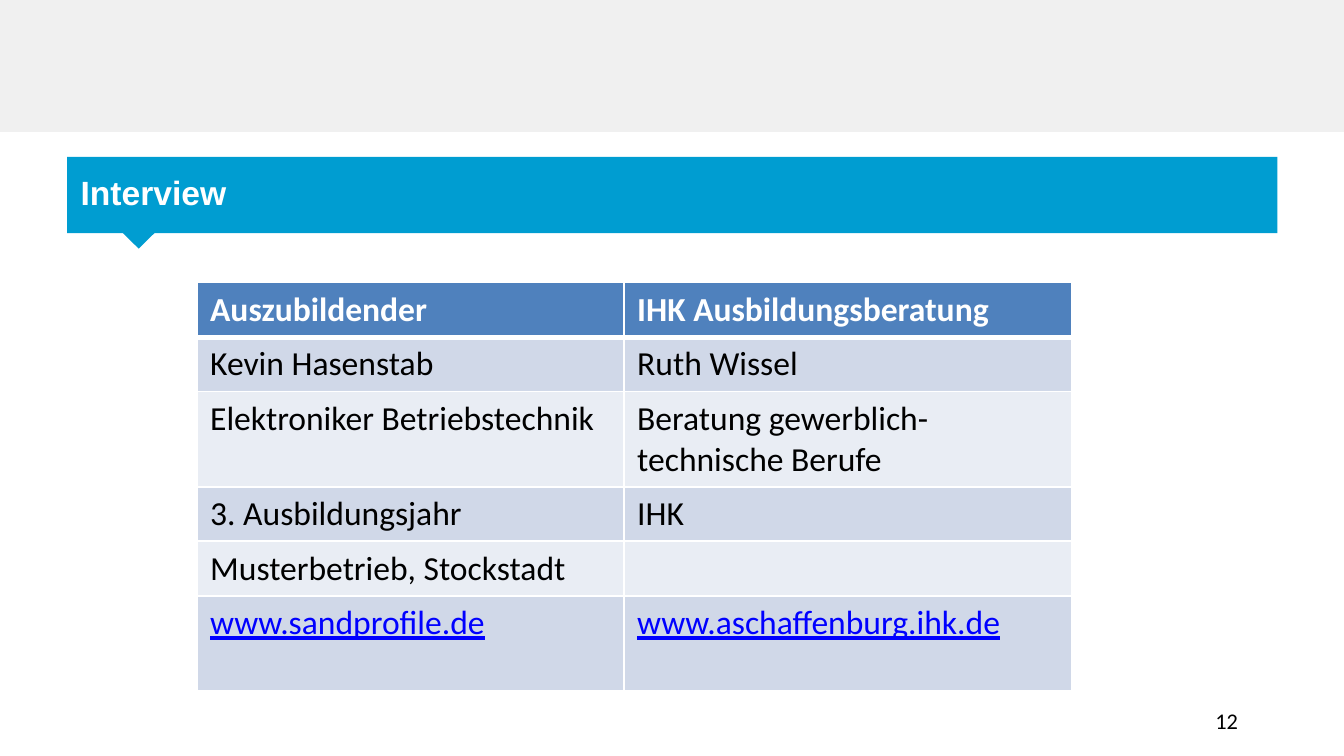
"""Build the interview slide with its table of two interview partners."""
import pptx
import pptx.dml.color
import pptx.enum.shapes
import pptx.enum.text
import pptx.oxml
import pptx.oxml.ns
import pptx.util

Pt = pptx.util.Pt
RGBColor = pptx.dml.color.RGBColor
MSO_SHAPE = pptx.enum.shapes.MSO_SHAPE
MSO_ANCHOR = pptx.enum.text.MSO_ANCHOR
PP_ALIGN = pptx.enum.text.PP_ALIGN

COLORS = {
    "white": "FFFFFF",
    "black": "000000",
    "band": "F0F0F0",
    "accent": "009DD1",
    "header": "4F81BD",
    "odd_row": "D0D8E8",
    "even_row": "E9EDF4",
    "link": "0000FF",
}
ROWS = [
    ("Auszubildender", "IHK Ausbildungsberatung"),
    ("Kevin Hasenstab", "Ruth Wissel"),
    ("Elektroniker Betriebstechnik", "Beratung gewerblich-technische Berufe"),
    ("3. Ausbildungsjahr", "IHK"),
    ("Musterbetrieb, Stockstadt", ""),
    ("www.sandprofile.de", "www.aschaffenburg.ihk.de"),
]
ROW_HEIGHTS = [29.2, 29.2, 51, 29.2, 29.2, 51]
COLUMN_WIDTHS = [228.8, 239.8]


def format_font(font, name, size, color, bold=False):
    font.name = name
    font.size = Pt(size)
    font.bold = bold
    font.color.rgb = RGBColor.from_string(COLORS[color])


def add_border(cell, side, width):
    cell._tc.get_or_add_tcPr().append(pptx.oxml.parse_xml(
        f'<a:{side} {pptx.oxml.ns.nsdecls("a")} w="{Pt(width)}"><a:solidFill>'
        f'<a:srgbClr val="{COLORS["white"]}"/></a:solidFill></a:{side}>'
    ))


presentation = pptx.Presentation()
presentation.slide_width = Pt(720)
presentation.slide_height = Pt(405)
slide = presentation.slides.add_slide(presentation.slide_layouts[5])

decorations = [
    (MSO_SHAPE.RECTANGLE, (0, 0, 720, 70.6), 0, "band"),
    (MSO_SHAPE.ISOSCELES_TRIANGLE, (65.6, 124.6, 17.4, 8.6), 180, "accent"),
]
for kind, box, rotation, color in decorations:
    shape = slide.shapes.add_shape(kind, *map(Pt, box))
    shape.rotation = rotation
    shape.shadow.inherit = False
    shape.fill.solid()
    shape.fill.fore_color.rgb = RGBColor.from_string(COLORS[color])
    shape.line.fill.background()

title = slide.shapes.title
title.left, title.top, title.width, title.height = map(Pt, (36, 84, 648.4, 41))
title.fill.solid()
title.fill.fore_color.rgb = RGBColor.from_string(COLORS["accent"])
title.text_frame.text = "Interview"
title.text_frame.auto_size = pptx.enum.text.MSO_AUTO_SIZE.NONE
title.text_frame.vertical_anchor = MSO_ANCHOR.TOP
paragraph = title.text_frame.paragraphs[0]
paragraph.alignment = PP_ALIGN.LEFT
paragraph.line_spacing = 1.2
format_font(paragraph.runs[0].font, "Arial", 18, "white", bold=True)

page_number = slide.shapes.add_textbox(*map(Pt, (508.3, 375.4, 162, 21.6)))
page_number.text_frame.word_wrap = True
page_number.text_frame.vertical_anchor = MSO_ANCHOR.MIDDLE
page_number.text_frame.text = "12"
paragraph = page_number.text_frame.paragraphs[0]
paragraph.alignment = PP_ALIGN.RIGHT
format_font(paragraph.runs[0].font, "Calibri", 12, "black")

table = slide.shapes.add_table(
    len(ROWS), len(COLUMN_WIDTHS), Pt(105.4), Pt(151.4),
    Pt(sum(COLUMN_WIDTHS)), Pt(sum(ROW_HEIGHTS)),
).table
for column, width in zip(table.columns, COLUMN_WIDTHS):
    column.width = Pt(width)

for row_index, texts in enumerate(ROWS):
    table.rows[row_index].height = Pt(ROW_HEIGHTS[row_index])
    is_header = row_index == 0
    row_fill = "header" if is_header else ("even_row", "odd_row")[row_index % 2]
    for column_index, text in enumerate(texts):
        cell = table.cell(row_index, column_index)
        add_border(cell, "lnL", 1)
        add_border(cell, "lnR", 1)
        add_border(cell, "lnT", 3 if row_index == 1 else 1)
        add_border(cell, "lnB", 3 if is_header else 1)
        cell.fill.solid()
        cell.fill.fore_color.rgb = RGBColor.from_string(COLORS[row_fill])
        cell.text_frame.text = text
        is_link = text.startswith("www.")
        text_color = "white" if is_header else "link" if is_link else "black"
        font = cell.text_frame.paragraphs[0].font
        format_font(font, "Calibri", 18, text_color, bold=is_header)
        for run in cell.text_frame.paragraphs[0].runs:
            format_font(run.font, "Calibri", 18, text_color, bold=is_header)
            run.font.underline = is_link

presentation.save("out.pptx")
